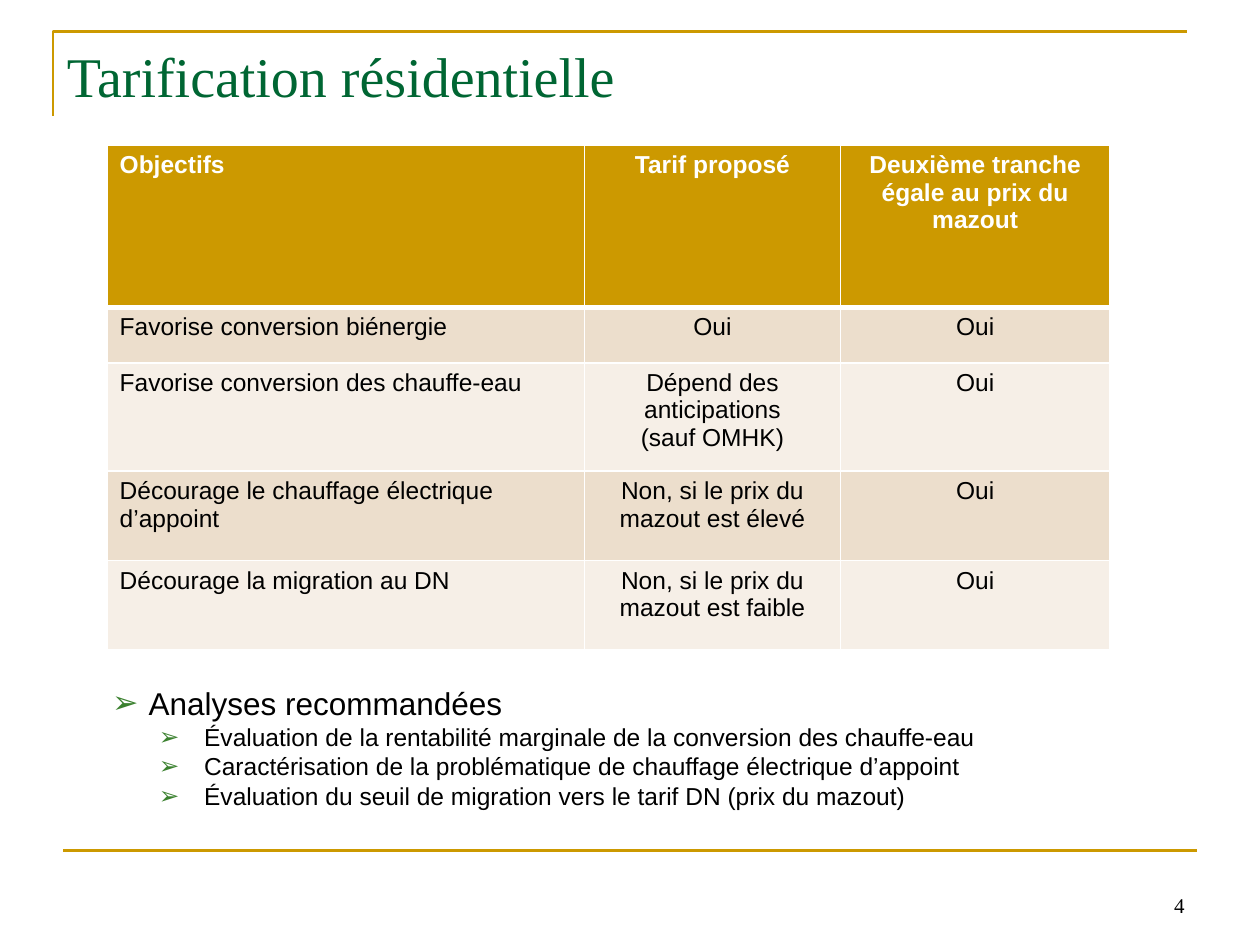
from dataclasses import dataclass

from lxml.etree import SubElement
from pptx import Presentation
from pptx.dml.color import RGBColor
from pptx.enum.shapes import MSO_CONNECTOR as Connector
from pptx.enum.text import MSO_ANCHOR as Anchor, MSO_AUTO_SIZE as AutoSize, PP_ALIGN as Align
from pptx.oxml.ns import qn
from pptx.util import Inches, Pt

# The page is a grid of 100 columns by 75 rows
CELL = Inches(0.1)


@dataclass(frozen=True)
class Theme:
    gold: str = "CC9900"
    green: str = "006633"
    bullet: str = "3B812F"
    ink: str = "000000"
    white: str = "FFFFFF"
    bands: tuple[str, str] = ("ECDECC", "F6EFE7")
    serif: str = "Times New Roman"
    sans: str = "Arial"
    title: int = 32
    lead: int = 18
    text: int = 14
    number: int = 12
    rule: float = 1.5


@dataclass(frozen=True)
class Area:
    column: float
    row: float
    columns: float
    rows: float

    def lengths(self) -> tuple[int, ...]:
        return tuple(grid(v) for v in (self.column, self.row, self.columns, self.rows))


@dataclass(frozen=True)
class Item:
    text: str
    level: int
    size: int
    margin: float
    hang: float


THEME = Theme()
COLUMNS = (37.9, 20.3, 21.4)
ROWS = (12.9, 4.4, 8.6, 7.1, 7.1)
TABLE = [
    ("Objectifs", "Tarif proposé", "Deuxième tranche égale au prix du mazout"),
    ("Favorise conversion biénergie", "Oui", "Oui"),
    ("Favorise conversion des chauffe-eau", "Dépend des anticipations\n(sauf OMHK)", "Oui"),
    ("Décourage le chauffage électrique d’appoint", "Non, si le prix du mazout est élevé", "Oui"),
    ("Décourage la migration au DN", "Non, si le prix du mazout est faible", "Oui"),
]
ANALYSES = [
    "Évaluation de la rentabilité marginale de la conversion des chauffe-eau",
    "Caractérisation de la problématique de chauffage électrique d’appoint",
    "Évaluation du seuil de migration vers le tarif DN (prix du mazout)",
]
ITEMS = [Item("Analyses recommandées", 0, THEME.lead, 2.9, 2.9)]
ITEMS += [Item(text, 1, THEME.text, 7.3, 3.6) for text in ANALYSES]


def grid(count: float) -> int:
    return round(count * CELL)


def color(value: str) -> RGBColor:
    return RGBColor.from_string(value)


def place(shape, area: Area) -> None:
    shape.left, shape.top, shape.width, shape.height = area.lengths()


def style(para, face: str, size: int, ink: str, align=Align.LEFT, bold=False) -> None:
    para.alignment = align
    font = para.font
    font.name, font.size, font.bold = face, Pt(size), bold
    font.color.rgb = color(ink)


def draw_rule(shape) -> None:
    shape.line.color.rgb = color(THEME.gold)
    shape.line.width = Pt(THEME.rule)


def add_frame(page) -> None:
    builder = page.shapes.build_freeform(grid(4.2), grid(9.2))
    builder.add_line_segments([(grid(4.2), grid(2.5)), (grid(94.2), grid(2.5))], close=False)
    corner = builder.convert_to_shape()
    corner.fill.background()
    corner.shadow.inherit = False
    draw_rule(corner)
    footer = page.shapes.add_connector(
        Connector.STRAIGHT, grid(5), grid(67.5), grid(95), grid(67.5))
    draw_rule(footer)
    SubElement(footer._element.spPr, qn("a:effectLst"))


def add_title(page, text: str) -> None:
    title = page.shapes.title
    place(title, Area(4.3, 2.8, 90, 9.5))
    title.text_frame.text = text
    title.text_frame.vertical_anchor = Anchor.TOP
    style(title.text_frame.paragraphs[0], THEME.serif, THEME.title, THEME.green)


def set_borders(cell, bottom: float) -> None:
    properties = cell._tc.get_or_add_tcPr()
    for index, (side, width) in enumerate(
            (("lnL", 1), ("lnR", 1), ("lnT", 1), ("lnB", bottom))):
        line = properties.makeelement(qn(f"a:{side}"), {"w": str(Pt(width))})
        fill = SubElement(line, qn("a:solidFill"))
        SubElement(fill, qn("a:srgbClr"), val=THEME.white)
        properties.insert(index, line)


def add_comparison(page) -> None:
    area = Area(8.5, 11.5, sum(COLUMNS), sum(ROWS))
    table = page.shapes.add_table(len(ROWS), len(COLUMNS), *area.lengths()).table
    for column, width in zip(table.columns, COLUMNS):
        column.width = grid(width)
    for r, (height, texts) in enumerate(zip(ROWS, TABLE)):
        table.rows[r].height = grid(height)
        header = r == 0
        for c, text in enumerate(texts):
            cell = table.cell(r, c)
            cell.text = text
            cell.fill.solid()
            cell.fill.fore_color.rgb = color(THEME.gold if header else THEME.bands[(r - 1) % 2])
            # The line under the header is shared with the first body row
            set_borders(cell, 3 if header else 1)
            for para in cell.text_frame.paragraphs:
                style(para, THEME.sans, THEME.text, THEME.white if header else THEME.ink,
                      Align.CENTER if c else Align.LEFT, header)


def set_bullet(para, item: Item) -> None:
    properties = para._p.get_or_add_pPr()
    properties.set("marL", str(grid(item.margin)))
    properties.set("indent", str(-grid(item.hang)))
    bullet_color = SubElement(properties, qn("a:buClr"))
    SubElement(bullet_color, qn("a:srgbClr"), val=THEME.bullet)
    SubElement(properties, qn("a:buFont"), typeface=THEME.sans)
    SubElement(properties, qn("a:buChar"), char="➢")


def add_analyses(page) -> None:
    body = page.placeholders[1]
    place(body, Area(7.9, 53.8, 86.4, 11.1))
    frame = body.text_frame
    frame.auto_size = AutoSize.NONE
    frame.text = "\n".join(item.text for item in ITEMS)
    for para, item in zip(frame.paragraphs, ITEMS):
        para.level = item.level
        para.space_before = Pt(0)
        set_bullet(para, item)
        style(para, THEME.sans, item.size, THEME.ink)


def add_number(page, number: int) -> None:
    box = page.shapes.add_textbox(*Area(71.7, 68.3, 23.3, 5).lengths())
    frame = box.text_frame
    frame.word_wrap = True
    frame.vertical_anchor = Anchor.BOTTOM
    frame.text = str(number)
    style(frame.paragraphs[0], THEME.serif, THEME.number, THEME.ink, Align.RIGHT)


def main() -> None:
    deck = Presentation()
    deck.slide_width, deck.slide_height = grid(100), grid(75)
    page = deck.slides.add_slide(deck.slide_layouts[1])
    add_frame(page)
    add_title(page, "Tarification résidentielle")
    add_comparison(page)
    add_analyses(page)
    add_number(page, 4)
    deck.save("out.pptx")


if __name__ == "__main__":
    main()
